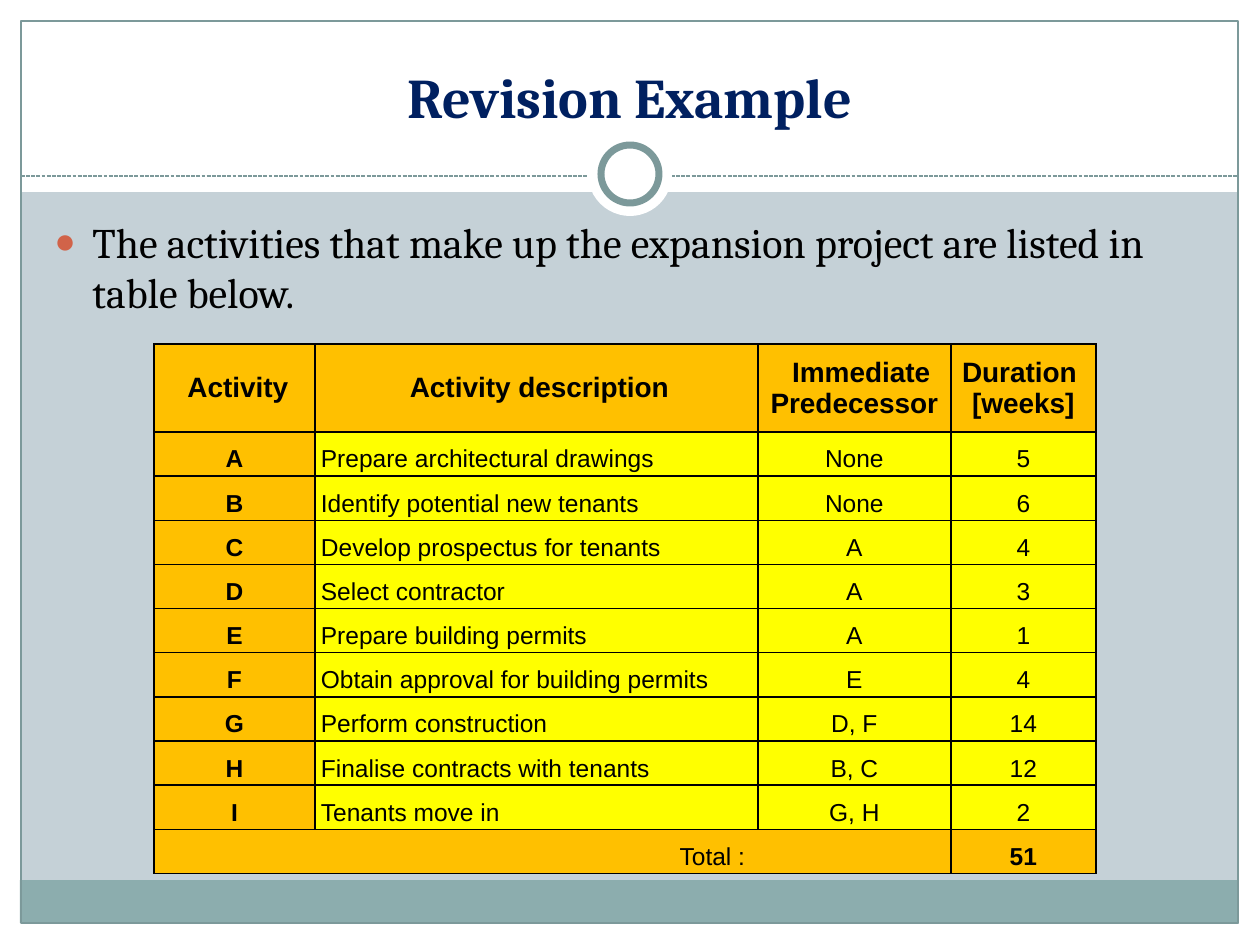
from lxml.etree import SubElement
from pptx import Presentation
from pptx.dml.color import RGBColor
from pptx.enum.dml import MSO_LINE
from pptx.enum.shapes import MSO_CONNECTOR, MSO_SHAPE
from pptx.enum.text import MSO_ANCHOR, PP_ALIGN
from pptx.oxml.ns import qn
from pptx.util import Pt

PX = 914400 / 126
RULE, ORANGE, YELLOW = "7C999A", "FFC000", "FFFF00"


def paint(target, colour):
    target.solid()
    target.fore_color.rgb = RGBColor.from_string(colour)


def add_run(paragraph, text, font, size, colour, bold=False):
    run = paragraph.add_run()
    run.text = text
    run.font.name, run.font.size, run.font.bold = font, Pt(size), bold
    paint(run.font.fill, colour)


prs = Presentation()
prs.slide_width, prs.slide_height = round(1260 * PX), round(945 * PX)
slide = prs.slides.add_slide(prs.slide_layouts[6])
paint(slide.background.fill, "C5D1D7")

# White margins, footer band, frame
for left, top, width, height, fill in [
    (0, 924, 1260, 21, "FFFFFF"),
    (0, 0, 1260, 192, "FFFFFF"),
    (0, 0, 21, 945, "FFFFFF"),
    (1239, 0, 21, 945, "FFFFFF"),
    (20, 880, 1218, 43, "8CADAE"),
    (21, 21, 1217, 902, None),
]:
    band = slide.shapes.add_shape(
        MSO_SHAPE.RECTANGLE, *(round(v * PX) for v in (left, top, width, height)))
    band.shadow.inherit = False
    if fill:
        paint(band.fill, fill)
        band.line.fill.background()
    else:
        band.fill.background()
        paint(band.line.fill, RULE)
        band.line.width = Pt(0.75)

# Dashed divider under the title
divider = slide.shapes.add_connector(
    MSO_CONNECTOR.STRAIGHT, *(round(v * PX) for v in (21, 176, 1239, 176)))
paint(divider.line.fill, RULE)
divider.line.width = Pt(0.75)
divider.line.dash_style = MSO_LINE.SQUARE_DOT
SubElement(divider.element.spPr, qn("a:effectLst"))

# Ring on the divider, with a white halo
for left, top, size, outline in [(588, 132, 84, 0), (601, 145, 58, 4)]:
    ring = slide.shapes.add_shape(
        MSO_SHAPE.OVAL, *(round(v * PX) for v in (left, top, size, size)))
    ring.shadow.inherit = False
    paint(ring.fill, "FFFFFF")
    if outline:
        paint(ring.line.fill, RULE)
        ring.line.width = Pt(outline)
    else:
        ring.line.fill.background()

# Title
title = slide.shapes.add_textbox(*(round(v * PX) for v in (42, 31, 1176, 105))).text_frame
title.word_wrap = True
title.vertical_anchor = MSO_ANCHOR.BOTTOM
title.paragraphs[0].alignment = PP_ALIGN.CENTER
add_run(title.paragraphs[0], "Revision Example", "Cambria", 32, "002060", True)

# Bulleted introduction
intro = slide.shapes.add_textbox(*(round(v * PX) for v in (42, 210, 1179, 630))).text_frame
intro.word_wrap = True
sentence = intro.paragraphs[0]
sentence.space_before = Pt(5)
add_run(sentence, "The activities that make up the expansion project are listed in table below.",
        "Cambria", 24, "000000")
bullet = sentence._p.get_or_add_pPr()
bullet.set("marL", str(round(38 * PX)))
bullet.set("indent", str(round(-38 * PX)))
SubElement(SubElement(bullet, qn("a:buClr")), qn("a:srgbClr"), val="D16349")
SubElement(bullet, qn("a:buSzPct"), val="85000")
SubElement(bullet, qn("a:buFont"), typeface="Arial")
SubElement(bullet, qn("a:buChar"), char="●")

# Activity table: the description spans two columns
headings = [" Activity", "Activity description", " Immediate Predecessor", "Duration \n[weeks]"]
activities = [
    ("A", "Prepare architectural drawings", "None", "5"),
    ("B", "Identify potential new tenants", "None", "6"),
    ("C", "Develop prospectus for tenants", "A", "4"),
    ("D", "Select contractor", "A", "3"),
    ("E", "Prepare building permits", "A", "1"),
    ("F", "Obtain approval for building permits", "E", "4"),
    ("G", "Perform construction", "D, F", "14"),
    ("H", "Finalise contracts with tenants", "B, C", "12"),
    ("I", "Tenants move in", "G, H", "2"),
]
rows = [(name, what, "", *rest) for name, what, *rest in [headings, *activities]]
rows.append(("", "", "Total : ", "", "51"))
last = len(rows) - 1
column_widths = [161, 25, 418, 193, 145]

table = slide.shapes.add_table(
    len(rows), len(column_widths),
    *(round(v * PX) for v in (154, 344, sum(column_widths), 88 + 44 * last))).table
for column, width in zip(table.columns, column_widths):
    column.width = round(width * PX)
for r, row in enumerate(table.rows):
    row.height = round((44 if r else 88) * PX)

for r, texts in enumerate(rows):
    open_edges = {1, 2, 3} if r == last else {2}
    for c, text in enumerate(texts):
        cell = table.cell(r, c)
        cell.margin_left = cell.margin_right = round(6 * PX)
        cell.margin_top = cell.margin_bottom = 0
        cell.vertical_anchor = MSO_ANCHOR.TOP if r else MSO_ANCHOR.MIDDLE

        # Borders, left out inside spans and along the total row
        for side, edge in (("lnL", c), ("lnR", c + 1), ("lnT", None), ("lnB", None)):
            border = SubElement(cell._tc.get_or_add_tcPr(), qn(f"a:{side}"), w="12700")
            if edge in open_edges:
                SubElement(border, qn("a:noFill"))
            else:
                ink = SubElement(border, qn("a:solidFill"))
                SubElement(ink, qn("a:srgbClr"), val="000000")
        paint(cell.fill, YELLOW if 0 < r < last and c else ORANGE)

        for i, line in enumerate(text.split("\n")):
            entry = cell.text_frame.paragraphs[0] if i == 0 else cell.text_frame.add_paragraph()
            entry.alignment = PP_ALIGN.CENTER
            if r == last and c == 2:
                entry.alignment = PP_ALIGN.RIGHT
            elif 0 < r < last and c == 1:
                entry.alignment = PP_ALIGN.LEFT
            if r:
                entry.line_spacing = 1.5
            elif c in (1, 3):
                entry._p.get_or_add_pPr().set("indent", str(round(6 * PX)))
            if line:
                bold = r == 0 or c == 0 or (r == last and c == 4)
                add_run(entry, line, "Arial", 14 if r else 16, "000000", bold)
            else:
                entry.font.size = Pt(14)
    first = 0 if r == last else 1
    table.cell(r, first).merge(table.cell(r, first + 1))

prs.save("out.pptx")
